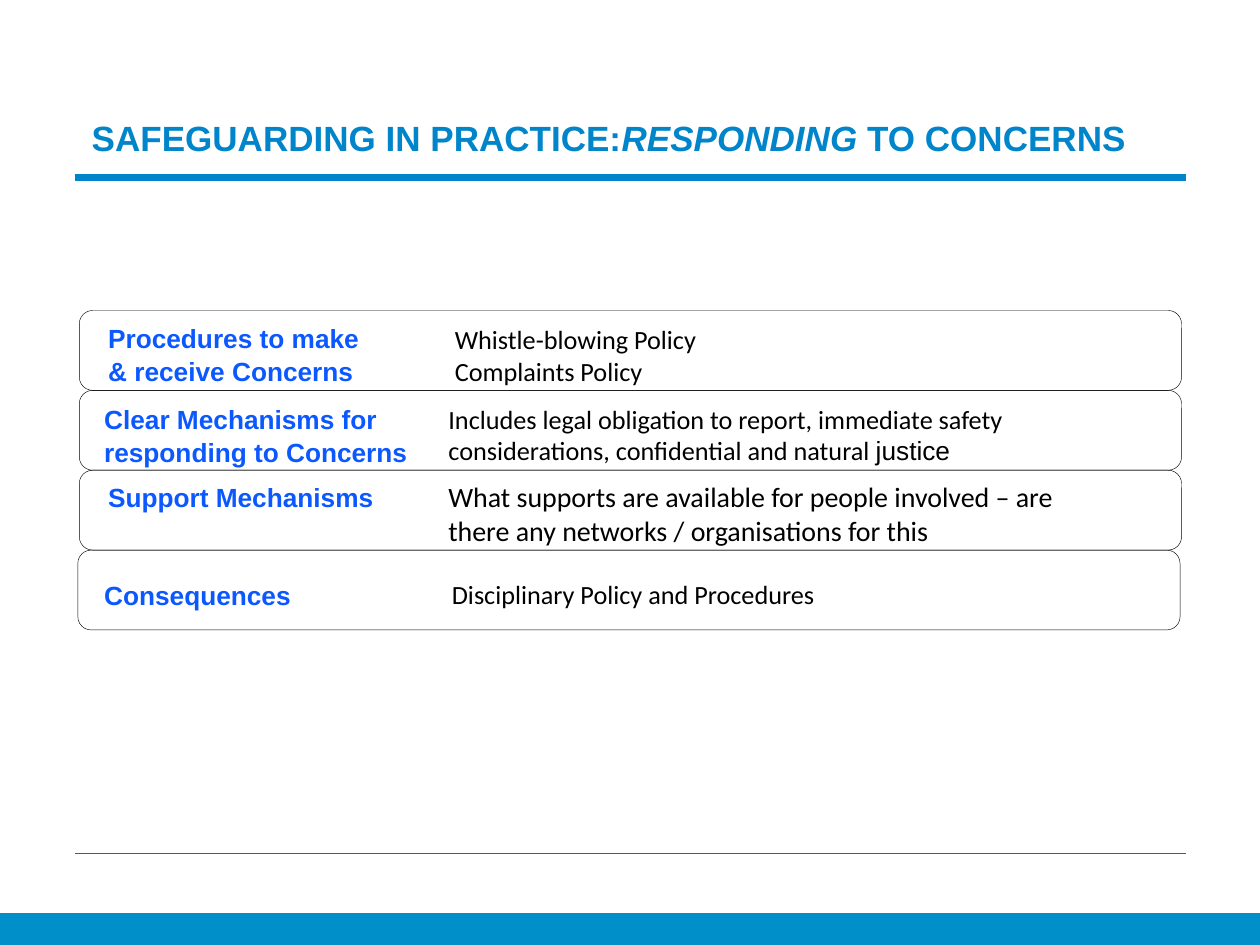
from pptx import Presentation
from pptx.dml.color import RGBColor
from pptx.enum.shapes import MSO_CONNECTOR, MSO_SHAPE
from pptx.enum.text import MSO_ANCHOR
from pptx.util import Cm, Pt
from lxml import etree

BLUE = RGBColor(0x00, 0x85, 0xCA)
BAND_BLUE = RGBColor(0x00, 0x8F, 0xC9)
LABEL_BLUE = RGBColor(0x0C, 0x58, 0xFF)
GREY = RGBColor(0x59, 0x59, 0x59)
BLACK = RGBColor(0, 0, 0)
STRAIGHT = MSO_CONNECTOR.STRAIGHT
RECTANGLE = MSO_SHAPE.RECTANGLE
ROUNDED = MSO_SHAPE.ROUNDED_RECTANGLE
TOP = MSO_ANCHOR.TOP
MIDDLE = MSO_ANCHOR.MIDDLE
EFFECTS = "{http://schemas.openxmlformats.org/drawingml/2006/main}effectLst"

deck = Presentation()
deck.slide_width = Cm(25.4)
deck.slide_height = Cm(19.05)
page = deck.slides.add_slide(deck.slide_layouts[6])


def add_text(left, top, width, height, paragraphs, size, color, spacing, anchor=TOP):
    box = page.shapes.add_textbox(Cm(left), Cm(top), Cm(width), Cm(height))
    frame = box.text_frame
    frame.word_wrap = True
    frame.vertical_anchor = anchor
    for index, runs in enumerate(paragraphs):
        para = frame.add_paragraph() if index else frame.paragraphs[0]
        para.line_spacing = spacing
        for text, font, bold, italic in runs:
            span = para.add_run()
            span.text = text
            span.font.name = font
            span.font.size = Pt(size)
            span.font.bold = bold
            span.font.italic = italic
            span.font.color.rgb = color


for height, color, weight in [(3.58, BLUE, 4), (17.2, GREY, 0.5)]:
    rule = page.shapes.add_connector(STRAIGHT, Cm(1.52), Cm(height), Cm(23.9), Cm(height))
    rule.line.color.rgb = color
    rule.line.width = Pt(weight)
    etree.SubElement(rule._element.spPr, EFFECTS)

band = page.shapes.add_shape(RECTANGLE, 0, Cm(18.44), deck.slide_width, Cm(0.61))
band.shadow.inherit = False
band.fill.solid()
band.fill.fore_color.rgb = BAND_BLUE
band.line.color.rgb = BAND_BLUE
band.line.width = Pt(2)

title = [
    ("SAFEGUARDING IN PRACTICE:", "Arial", True, False),
    ("RESPONDING ", "Arial", True, True),
    ("TO CONCERNS", "Arial", True, False),
]
add_text(1.6, 1.85, 22.22, 1.65, [title], 20, BLUE, Pt(30), MIDDLE)

rows = [
    (1.6, "Procedures to make & receive Concerns", 1.93, 6.35, 5.94,
     [[("Whistle-blowing Policy", "Calibri")], [("Complaints Policy", "Calibri")]],
     8.92, 6.4, 12.57, 15),
    (1.6, "Clear Mechanisms for responding to Concerns", 1.85, 7.98, 8.08,
     [[("Includes legal obligation to report, immediate safety considerations, "
        "confidential and natural ", "Calibri"), ("justice", "Arial")]],
     8.79, 8.0, 12.47, 15),
    (1.6, "Support Mechanisms", 1.93, 9.55, 6.32,
     [[("What supports are available for people involved – are there any networks "
        "/ organisations for this", "Calibri")]],
     8.79, 9.55, 13.46, 16),
    (1.57, "Consequences", 1.85, 11.53, 4.8,
     [[("Disciplinary Policy and Procedures", "Calibri")]],
     8.86, 11.53, 13.34, 15),
]
for index, row in enumerate(rows):
    (frame_left, label, label_left, label_top, label_width,
     details, detail_left, detail_top, detail_width, detail_size) = row
    outline = page.shapes.add_shape(
        ROUNDED, Cm(frame_left), Cm(6.26 + 1.61 * index), Cm(22.22), Cm(1.61))
    outline.shadow.inherit = False
    outline.fill.background()
    outline.line.color.rgb = BLACK
    outline.line.width = Pt(0.25)
    add_text(label_left, label_top, label_width, 1.5,
             [[(label, "Arial", True, False)]], 15, LABEL_BLUE, 1.05)
    paragraphs = [[(text, font, False, False) for text, font in runs] for runs in details]
    add_text(detail_left, detail_top, detail_width, 1.55,
             paragraphs, detail_size, BLACK, 1.0)

deck.save("out.pptx")
